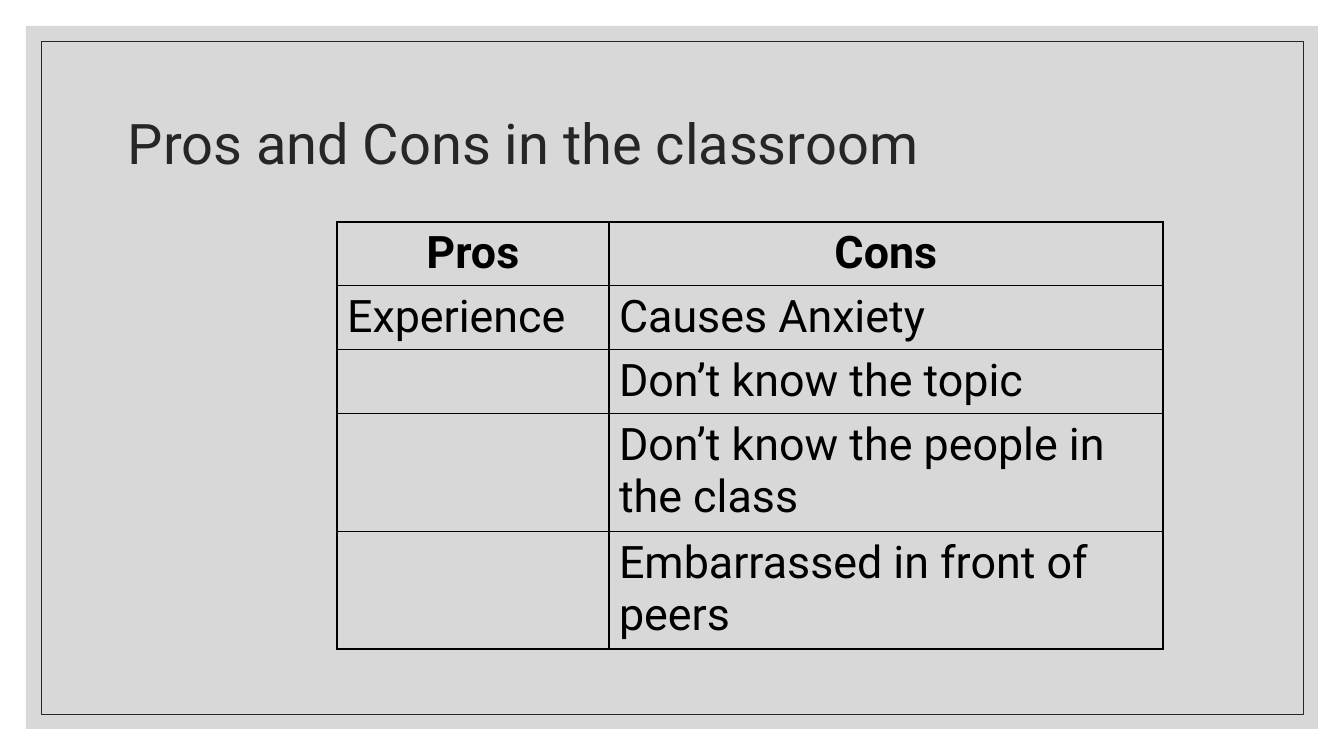
"""Builds a slide with a table of pros and cons in the classroom."""
from lxml import etree
from pptx import Presentation
from pptx import util as u
from pptx.dml.color import RGBColor
from pptx.enum import shapes, text
from pptx.oxml import ns

PX = 914400 / 100.8
COLORS = {"panel": "BFBFBF", "ink": "262626", "table": "000000"}


def px(*lengths):
    return [u.Emu(round(length * PX)) for length in lengths]


def write(frame, words, size, color, bold=False, align=text.PP_ALIGN.LEFT, spacing=1.0):
    para = frame.paragraphs[0]
    para.alignment = align
    para.line_spacing = spacing
    span = para.add_run()
    span.text = words
    span.font.name = "Roboto"
    span.font.size = u.Pt(size)
    span.font.bold = bold
    span.font.color.rgb = RGBColor.from_string(COLORS[color])


deck = Presentation()
deck.slide_width, deck.slide_height = px(1344, 756)
page = deck.slides.add_slide(deck.slide_layouts[6])

panel = page.shapes.add_shape(shapes.MSO_SHAPE.RECTANGLE, *px(26, 26, 1292, 703))
panel.shadow.inherit = False
panel.fill.solid()
panel.fill.fore_color.rgb = RGBColor.from_string(COLORS["panel"])
panel.line.fill.background()
panel_color = panel.fill._xPr.find(".//" + ns.qn("a:srgbClr"))
etree.SubElement(panel_color, ns.qn("a:alpha"), val="60000")

border = page.shapes.add_shape(shapes.MSO_SHAPE.RECTANGLE, *px(41, 41, 1262, 673))
border.shadow.inherit = False
border.fill.background()
border.line.color.rgb = RGBColor.from_string(COLORS["ink"])
border.line.width = u.Pt(0.5)

title = page.shapes.add_textbox(*px(118, 71, 1109, 151)).text_frame
title.word_wrap = True
title.vertical_anchor = text.MSO_ANCHOR.MIDDLE
write(title, "Pros and Cons in the classroom", 40, "ink", spacing=0.9)

rows = [
    ("Pros", "Cons"),
    ("Experience", "Causes Anxiety"),
    ("", "Don’t know the topic"),
    ("", "Don’t know the people in the class"),
    ("", "Embarrassed in front of peers"),
]
row_heights = px(62, 62, 62, 115, 115)
table = page.shapes.add_table(len(rows), 2, *px(337, 222, 826, 416)).table
table.first_row = False
table.horz_banding = False
for column, width in zip(table.columns, px(272, 554)):
    column.width = width

for row_index, entries in enumerate(rows):
    table.rows[row_index].height = row_heights[row_index]
    header = row_index == 0
    align = text.PP_ALIGN.CENTER if header else text.PP_ALIGN.LEFT
    for column_index, words in enumerate(entries):
        cell = table.cell(row_index, column_index)
        if words:
            write(cell.text_frame, words, 32, "table", bold=header, align=align)
        properties = cell._tc.get_or_add_tcPr()
        for side in ("lnL", "lnR", "lnT", "lnB"):
            edge = etree.SubElement(properties, ns.qn("a:" + side), w=str(u.Pt(1)))
            fill = etree.SubElement(edge, ns.qn("a:solidFill"))
            etree.SubElement(fill, ns.qn("a:srgbClr"), val=COLORS["table"])
        cell.fill.background()

deck.save("out.pptx")
